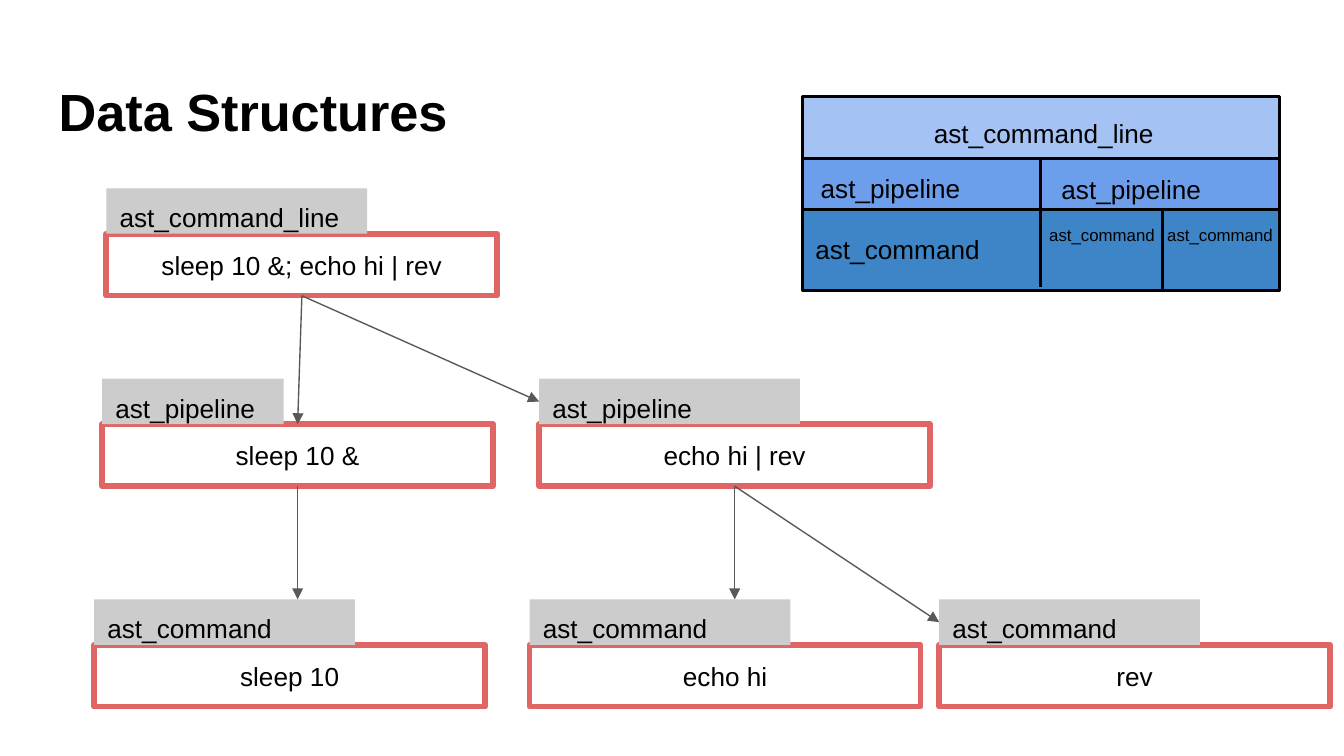
from lxml.etree import SubElement
from pptx import Presentation
from pptx.dml.color import RGBColor
from pptx.enum.shapes import MSO_CONNECTOR, MSO_SHAPE
from pptx.enum.text import MSO_ANCHOR, MSO_AUTO_SIZE, PP_ALIGN
from pptx.oxml.ns import qn
from pptx.util import Cm, Pt

BLACK = RGBColor(0x00, 0x00, 0x00)
ARROW_GRAY = RGBColor(0x59, 0x59, 0x59)
LABEL_GRAY = RGBColor(0xCC, 0xCC, 0xCC)
NODE_RED = RGBColor(0xE0, 0x66, 0x66)
LINE_BLUE = RGBColor(0xA4, 0xC2, 0xF4)
PIPELINE_BLUE = RGBColor(0x6D, 0x9E, 0xEB)
COMMAND_BLUE = RGBColor(0x3D, 0x85, 0xC6)

INSET = 0.25
NODE_WIDTH = 7.39
LABEL_WIDTH = 4.93
LABEL_HEIGHT = 0.86
CODE_HEIGHT = 1.17


def write(shape, text, size=14, align=PP_ALIGN.LEFT, anchor=MSO_ANCHOR.TOP, bold=False):
    frame = shape.text_frame
    frame.word_wrap = True
    frame.auto_size = MSO_AUTO_SIZE.NONE
    frame.vertical_anchor = anchor
    frame.margin_left = frame.margin_right = Cm(INSET)
    frame.margin_top = frame.margin_bottom = Cm(INSET)
    paragraph = frame.paragraphs[0]
    paragraph.alignment = align
    run = paragraph.add_run()
    run.text = text
    run.font.name = "Arial"
    run.font.size = Pt(size)
    run.font.bold = bold
    run.font.color.rgb = BLACK


def add_rect(slide, left, top, width, height, fill=None, outline=None, weight=1.5):
    rect = slide.shapes.add_shape(
        MSO_SHAPE.RECTANGLE, Cm(left), Cm(top), Cm(width), Cm(height))
    rect.shadow.inherit = False
    if fill is None:
        rect.fill.background()
    else:
        rect.fill.solid()
        rect.fill.fore_color.rgb = fill
    if outline is None:
        rect.line.fill.background()
    else:
        rect.line.color.rgb = outline
        rect.line.width = Pt(weight)
    return rect


def add_line(slide, start, end, color, weight):
    line = slide.shapes.add_connector(
        MSO_CONNECTOR.STRAIGHT, *(Cm(value) for value in (*start, *end)))
    line.line.color.rgb = color
    line.line.width = Pt(weight)
    SubElement(line._element.spPr, qn("a:effectLst"))
    return line


def add_arrow(slide, start, end):
    arrow = add_line(slide, start, end, ARROW_GRAY, 0.75)
    SubElement(arrow.line._get_or_add_ln(), qn("a:tailEnd"), type="triangle")
    return arrow


def add_title(slide, left, top, width, height):
    title = slide.shapes.title
    title.left, title.top = Cm(left), Cm(top)
    title.width, title.height = Cm(width), Cm(height)
    write(title, "Data Structures", 28, bold=True)


def add_node(slide, left, top, kind, command, label_width=LABEL_WIDTH):
    code = add_rect(slide, left, top + LABEL_HEIGHT, NODE_WIDTH, CODE_HEIGHT,
                    outline=NODE_RED, weight=3)
    write(code, command, align=PP_ALIGN.CENTER, anchor=MSO_ANCHOR.MIDDLE)
    label = add_rect(slide, left, top, label_width, LABEL_HEIGHT, LABEL_GRAY)
    write(label, kind)
    return code, label


def add_tree(slide, left, top):
    pipeline_top, command_top = top + 3.6, top + 7.77
    root, _ = add_node(slide, left + 0.23, top, "ast_command_line",
                       "sleep 10 &; echo hi | rev")
    sleep_left, echo_left = left + 0.15, left + 8.41
    sleep, _ = add_node(slide, sleep_left, pipeline_top, "ast_pipeline",
                        "sleep 10 &", 3.43)
    echo, echo_label = add_node(slide, echo_left, pipeline_top, "ast_pipeline",
                                "echo hi | rev")
    commands = [(0, "sleep 10"), (8.23, "echo hi"), (15.97, "rev")]
    labels = [add_node(slide, left + offset, command_top, "ast_command", command)[1]
              for offset, command in commands]

    bottom, top_side, left_side = 2, 0, 1
    for parent, child, side in [(root, sleep, top_side),
                                (root, echo_label, left_side),
                                (echo, labels[-1], left_side)]:
        branch = add_arrow(slide, (0, 0), (1, 1))
        branch.begin_connect(parent, bottom)
        branch.end_connect(child, side)

    pipeline_bottom = pipeline_top + LABEL_HEIGHT + CODE_HEIGHT
    for pipeline_left in (sleep_left, echo_left):
        center = pipeline_left + NODE_WIDTH / 2
        add_arrow(slide, (center, pipeline_bottom), (center, command_top))


def add_nesting(slide, left, top, width, height):
    for offset, fill in [(0, LINE_BLUE), (1.17, PIPELINE_BLUE), (2.13, COMMAND_BLUE)]:
        add_rect(slide, left, top + offset, width, height - offset, fill, BLACK)

    for x, start, end in [(4.5, 1.17, 3.6), (6.81, 2.16, 3.63)]:
        add_line(slide, (left + x, top + start), (left + x, top + end), BLACK, 1.5)

    captions = [
        ("ast_command_line", 2.24, 0.13, 5.33, 14),
        ("ast_pipeline", 0.1, 1.17, 3.5, 14),
        ("ast_pipeline", 4.65, 1.19, 3.5, 14),
        ("ast_command", 0, 2.34, 3.94, 14),
        ("ast_command", 4.42, 2.16, 3.5, 9),
        ("ast_command", 6.65, 2.16, 3.5, 9),
    ]
    for kind, x, y, caption_width, size in captions:
        caption = slide.shapes.add_textbox(
            Cm(left + x), Cm(top + y), Cm(caption_width), Cm(0.9))
        write(caption, kind, size)


def main():
    presentation = Presentation()
    presentation.slide_width, presentation.slide_height = Cm(25.4), Cm(14.29)
    slide = presentation.slides.add_slide(presentation.slide_layouts[5])
    add_title(slide, 0.86, 1.24, 23.67, 1.6)
    add_nesting(slide, 15.16, 1.83, 9.02, 3.66)
    add_tree(slide, 1.78, 3.56)
    presentation.save("out.pptx")


if __name__ == "__main__":
    main()
